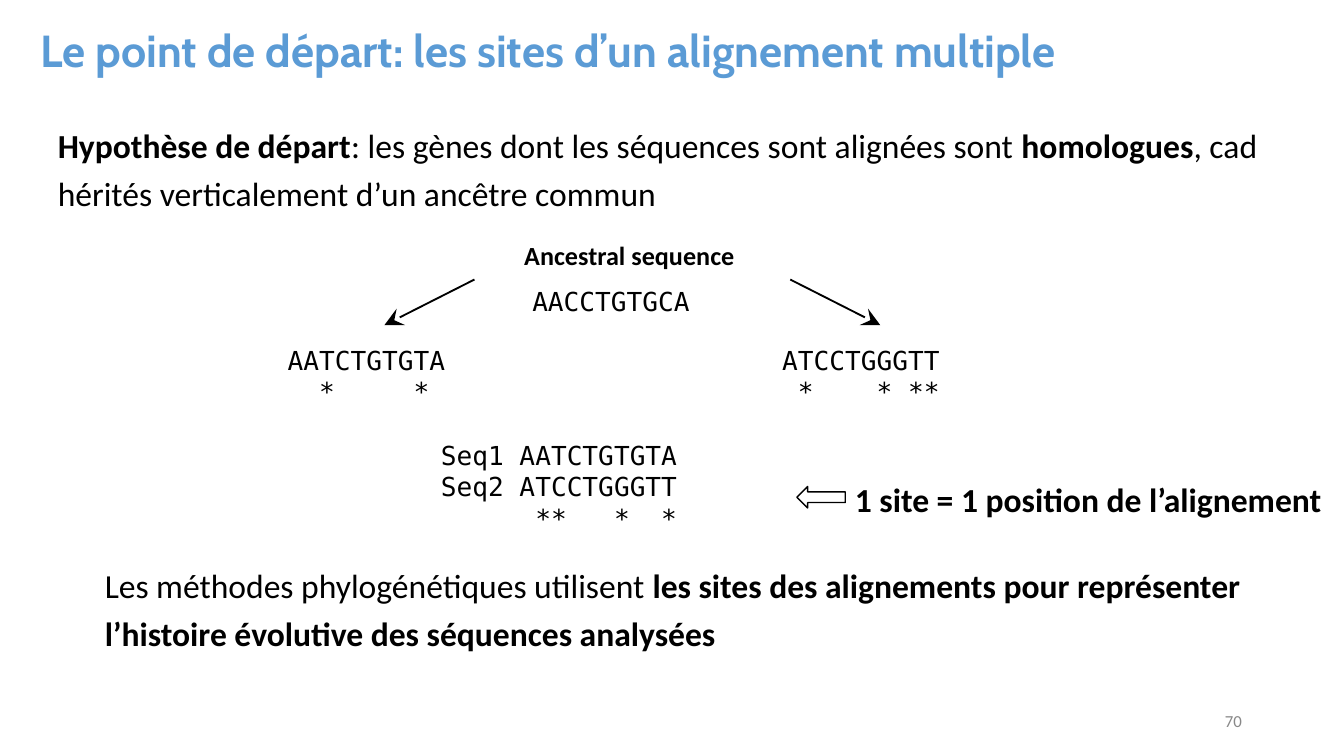
from dataclasses import dataclass

from lxml import etree
from pptx import Presentation
from pptx.dml.color import RGBColor
from pptx.enum.shapes import MSO_CONNECTOR, MSO_SHAPE
from pptx.enum.text import MSO_ANCHOR, MSO_AUTO_SIZE, PP_ALIGN
from pptx.oxml.ns import qn
from pptx.util import Inches, Pt

BLACK = RGBColor(0x00, 0x00, 0x00)
BLUE = RGBColor(0x5B, 0x9B, 0xD5)
GRAY = RGBColor(0x88, 0x88, 0x88)

STRAIGHT = MSO_CONNECTOR.STRAIGHT
LEFT_ARROW = MSO_SHAPE.LEFT_ARROW
TOP, MIDDLE = MSO_ANCHOR.TOP, MSO_ANCHOR.MIDDLE
LEFT, RIGHT = PP_ALIGN.LEFT, PP_ALIGN.RIGHT
FIXED_SIZE = MSO_AUTO_SIZE.NONE
TITLE_ONLY = 5

# Text formats
TITLE = {"name": "Cabin", "size": Pt(24)}
BODY = {"name": "Calibri", "size": Pt(18)}
LABEL = {"name": "Calibri", "size": Pt(14)}
SEQUENCE = {"name": "DejaVu Sans Mono", "size": Pt(14)}
NUMBER = {"name": "Calibri", "size": Pt(9)}


@dataclass
class Run:
    text: str
    bold: bool = False


@dataclass
class TextBlock:
    box: tuple[float, float, float, float]
    paragraphs: list[list[Run]]
    style: dict
    color: RGBColor = BLACK
    spacing: float = 1.0
    align: PP_ALIGN = LEFT
    anchor: MSO_ANCHOR = TOP
    top_inset: float = 0.04


@dataclass
class Arrow:
    start: tuple[float, float]
    end: tuple[float, float]


def lines(*texts: str, bold: bool = False) -> list[list[Run]]:
    return [[Run(text, bold)] for text in texts]


def fill_text(shape, block: TextBlock) -> None:
    shape.left, shape.top, shape.width, shape.height = map(Inches, block.box)
    frame = shape.text_frame
    frame_format = {
        "word_wrap": True,
        "auto_size": FIXED_SIZE,
        "vertical_anchor": block.anchor,
        "margin_left": Inches(0.07),
        "margin_right": Inches(0.07),
        "margin_top": Inches(block.top_inset),
        "margin_bottom": Inches(0.04),
    }
    for name, value in frame_format.items():
        setattr(frame, name, value)
    for index, runs in enumerate(block.paragraphs):
        paragraph = frame.add_paragraph() if index else frame.paragraphs[0]
        paragraph.alignment = block.align
        paragraph.line_spacing = block.spacing
        for part in runs:
            run = paragraph.add_run()
            run.text = part.text
            for name, value in {**block.style, "bold": part.bold}.items():
                setattr(run.font, name, value)
            run.font.color.rgb = block.color


def draw_text(slide, block: TextBlock) -> None:
    fill_text(slide.shapes.add_textbox(*map(Inches, block.box)), block)


def draw_arrow(slide, arrow: Arrow) -> None:
    descent = slide.shapes.add_connector(
        STRAIGHT, *map(Inches, arrow.start + arrow.end))
    descent.line.color.rgb = BLACK
    descent.line.width = Pt(1)
    properties = descent.line._get_or_add_ln()
    etree.SubElement(properties, qn("a:tailEnd"), type="stealth", w="lg", len="lg")
    etree.SubElement(descent._element.spPr, qn("a:effectLst"))


HEADING = TextBlock(
    (0.23, 0, 8.83, 0.81),
    lines("Le point de départ: les sites d’un alignement multiple", bold=True),
    TITLE, BLUE, spacing=0.97, anchor=MIDDLE, top_inset=0.01)

TEXTS = [
    # Starting hypothesis
    TextBlock((0.36, 0.83, 9.21, 0.96), [[
        Run("Hypothèse de départ", True),
        Run(": les gènes dont les séquences sont alignées sont "),
        Run("homologues", True),
        Run(", cad hérités verticalement d’un ancêtre commun"),
    ]], BODY, spacing=1.2),
    # Ancestor and its two descendants
    TextBlock((3.83, 1.74, 1.75, 0.3), lines("Ancestral sequence", bold=True), LABEL),
    TextBlock((3.89, 2.08, 1.85, 0.24), lines("AACCTGTGCA"), SEQUENCE),
    TextBlock((2.07, 2.52, 1.46, 0.53), lines("AATCTGTGTA", "  *     *"), SEQUENCE),
    TextBlock((5.75, 2.52, 1.63, 0.53), lines("ATCCTGGGTT", " *    * **"), SEQUENCE),
    # Alignment and its note
    TextBlock((3.21, 3.23, 2.29, 0.76),
              lines("Seq1 AATCTGTGTA", "Seq2 ATCCTGGGTT", "      **   *  *"),
              SEQUENCE),
    TextBlock((6.29, 3.52, 3.71, 0.38),
              lines("1 site = 1 position de l’alignement", bold=True), BODY),
    # Conclusion
    TextBlock((0.71, 4.1, 9.14, 1.13), [[
        Run("Les méthodes phylogénétiques utilisent"),
        Run(" les sites des alignements pour représenter l’histoire évolutive "
            "des séquences analysées", True),
    ]], BODY, spacing=1.2),
    # Slide number
    TextBlock((7.06, 5.21, 2.25, 0.3), lines("70"), NUMBER, GRAY,
              align=RIGHT, anchor=MIDDLE),
]

DESCENTS = [
    Arrow((3.53, 2.08), (2.86, 2.42)),
    Arrow((5.88, 2.08), (6.55, 2.42)),
]


def main() -> None:
    # Widescreen 16:9 slide
    deck = Presentation()
    deck.slide_width = Inches(10)
    deck.slide_height = Inches(10 * 9 / 16)
    slide = deck.slides.add_slide(deck.slide_layouts[TITLE_ONLY])

    fill_text(slide.shapes.title, HEADING)
    for block in TEXTS:
        draw_text(slide, block)
    for arrow in DESCENTS:
        draw_arrow(slide, arrow)

    # Pointer from the note to the alignment
    pointer = slide.shapes.add_shape(
        LEFT_ARROW, *map(Inches, (5.93, 3.62, 0.36, 0.16)))
    pointer.shadow.inherit = False
    pointer.fill.background()
    pointer.line.color.rgb = BLACK
    pointer.line.width = Pt(0.75)

    deck.save("out.pptx")


if __name__ == "__main__":
    main()
